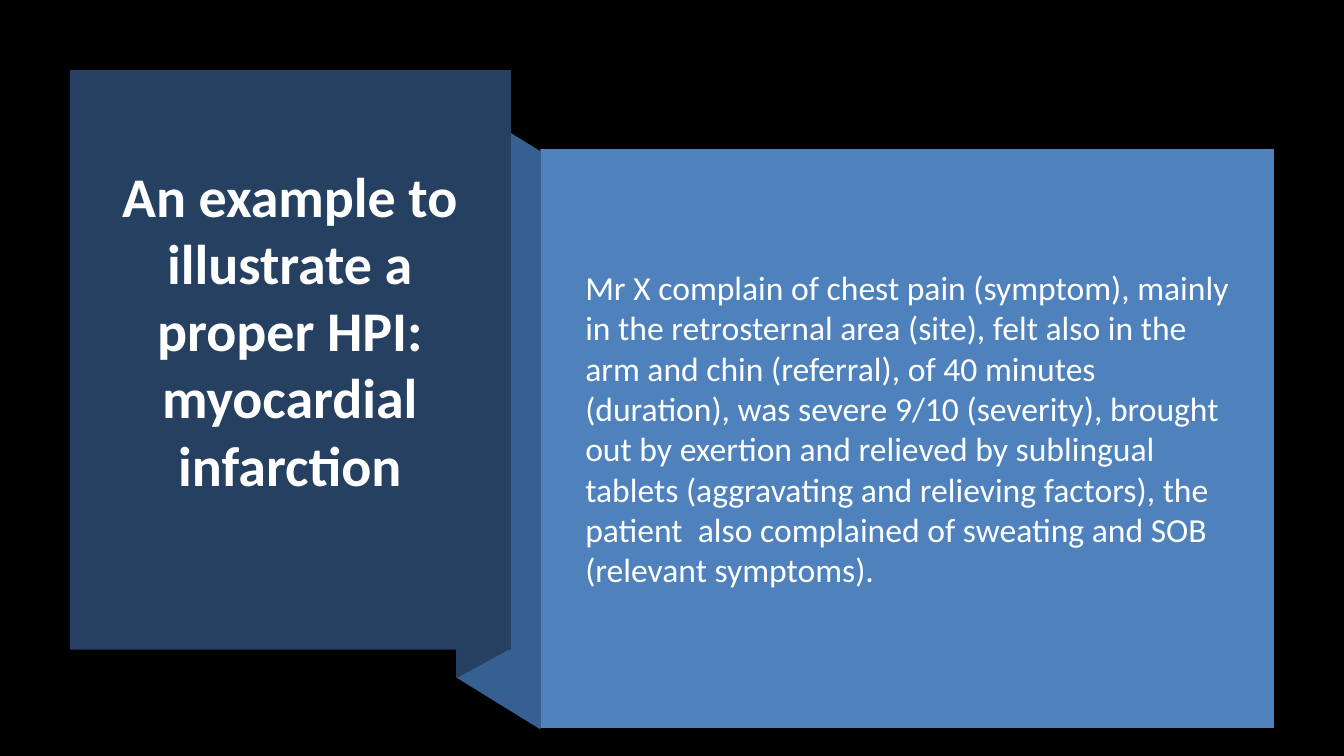
"""Build a folded-ribbon slide with a title panel and a case description."""
from pptx import Presentation
from pptx.dml.color import RGBColor
from pptx.enum.shapes import MSO_SHAPE as Shape
from pptx.enum.text import MSO_ANCHOR as Anchor, PP_ALIGN as Align
from pptx.util import Pt

BLACK = RGBColor(0x00, 0x00, 0x00)
NAVY = RGBColor(0x25, 0x40, 0x61)
STEEL = RGBColor(0x37, 0x60, 0x92)
BLUE = RGBColor(0x4F, 0x81, 0xBD)
WHITE = RGBColor(0xFF, 0xFF, 0xFF)
OFF_WHITE = RGBColor(0xFE, 0xFF, 0xFF)

TITLE = "An example to illustrate a proper HPI: myocardial infarction"
CASE = (
    "Mr X complain of chest pain (symptom), mainly in the retrosternal area "
    "(site), felt also in the arm and chin (referral), of 40 minutes "
    "(duration), was severe 9/10 (severity), brought out by exertion and "
    "relieved by sublingual tablets (aggravating and relieving factors), the "
    "patient  also complained of sweating and SOB (relevant symptoms)."
)


def paint(shape, color):
    """Give a shape a flat fill without line or shadow."""
    shape.shadow.inherit = False
    shape.fill.solid()
    shape.fill.fore_color.rgb = color
    shape.line.fill.background()


def add_panel(page, box, color):
    """Fill the given box with a plain rectangle."""
    paint(page.shapes.add_shape(Shape.RECTANGLE, *map(Pt, box)), color)


def add_fold(page, box, rise, color):
    """Draw a slanted ribbon fold whose right side is lifted by rise."""
    left, top, width, height = box
    right, bottom = left + width, top + height
    start, *others = [(left, top), (right, top - rise),
                      (right, bottom - rise), (left, bottom)]
    builder = page.shapes.build_freeform(*map(Pt, start), scale=1.0)
    builder.add_line_segments([tuple(map(Pt, point)) for point in others])
    paint(builder.convert_to_shape(), color)


def add_text(page, box, text, align, font_format, color, bottom_inset=3.6):
    """Place one vertically centred paragraph in the given box."""
    frame = page.shapes.add_textbox(*map(Pt, box)).text_frame
    frame_format = {"word_wrap": True, "vertical_anchor": Anchor.MIDDLE,
                    "margin_bottom": Pt(bottom_inset)}
    for name, value in frame_format.items():
        setattr(frame, name, value)
    para = frame.paragraphs[0]
    para.alignment = align
    span = para.add_run()
    span.text = text
    for name, value in font_format.items():
        setattr(span.font, name, value)
    span.font.color.rgb = color


def add_title_panel(page, box):
    """Draw the front panel with the title, above the folds."""
    left, top, width, height = box
    add_panel(page, box, NAVY)
    add_text(page, (left + 23.5, top + 27, width - 48, height - 55), TITLE,
             Align.CENTER, {"name": "Calibri", "size": Pt(40), "bold": True},
             WHITE, bottom_inset=46)


def add_case_panel(page, box):
    """Draw the back panel with the case description."""
    left, top, width, height = box
    add_panel(page, box, BLUE)
    add_text(page, (left + 25, top + 28.5, width - 39.5, height - 72), CASE,
             Align.LEFT, {"name": "Calibri", "size": Pt(24)}, OFF_WHITE)


def main():
    """Assemble the slide and save the deck."""
    deck = Presentation()
    deck.slide_width, deck.slide_height = Pt(960), Pt(540)
    page = deck.slides.add_slide(deck.slide_layouts[6])
    page.background.fill.solid()
    page.background.fill.fore_color.rgb = BLACK
    add_fold(page, (326, 71, 60, 413), -37, STEEL)
    add_fold(page, (326, 70.5, 38.5, 414), 21, NAVY)
    add_title_panel(page, (50, 50, 315, 414))
    add_case_panel(page, (386, 106.5, 524, 413.5))
    deck.save("out.pptx")


if __name__ == "__main__":
    main()
